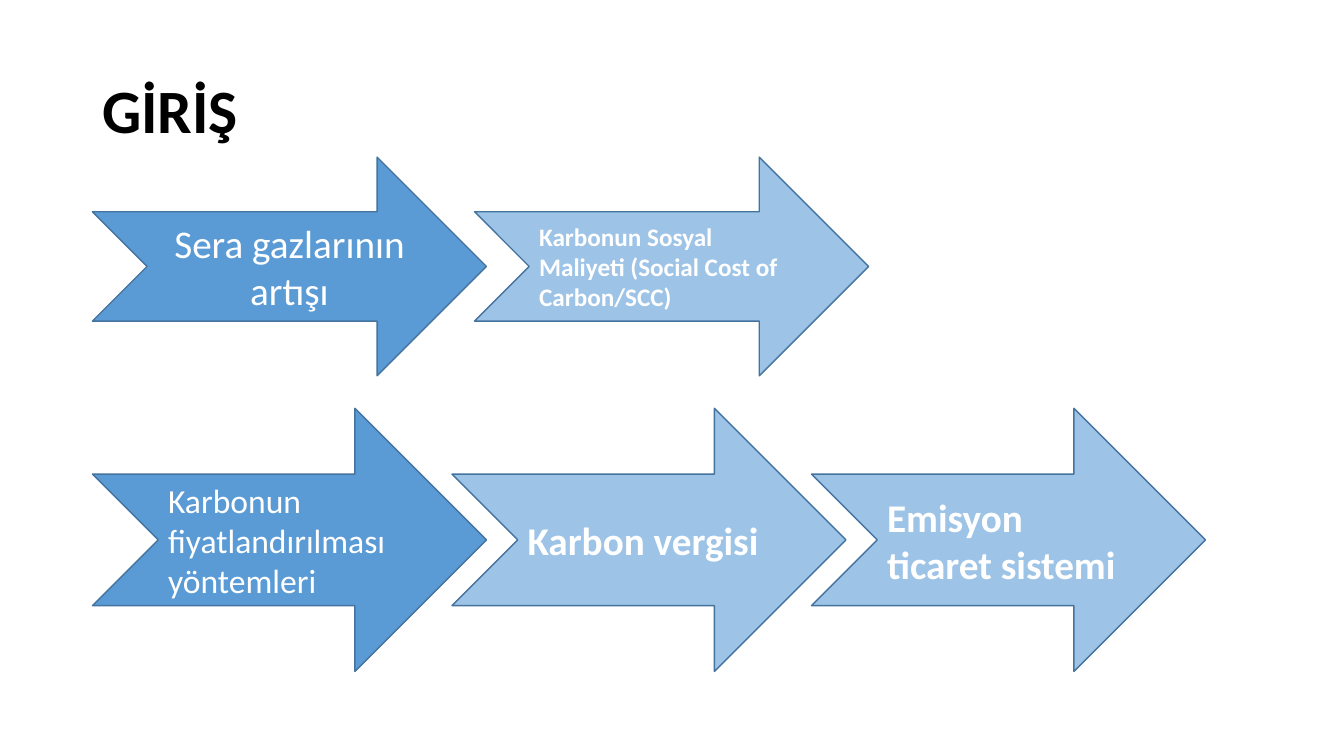
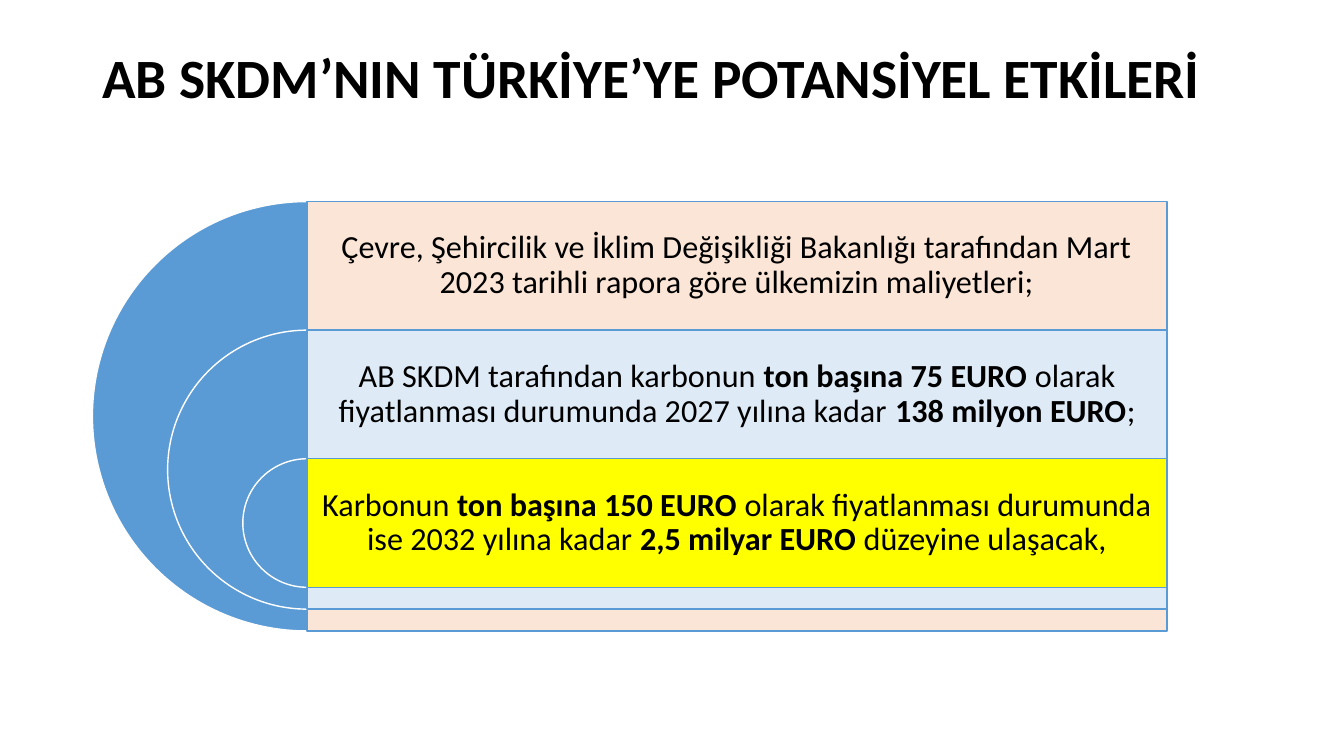
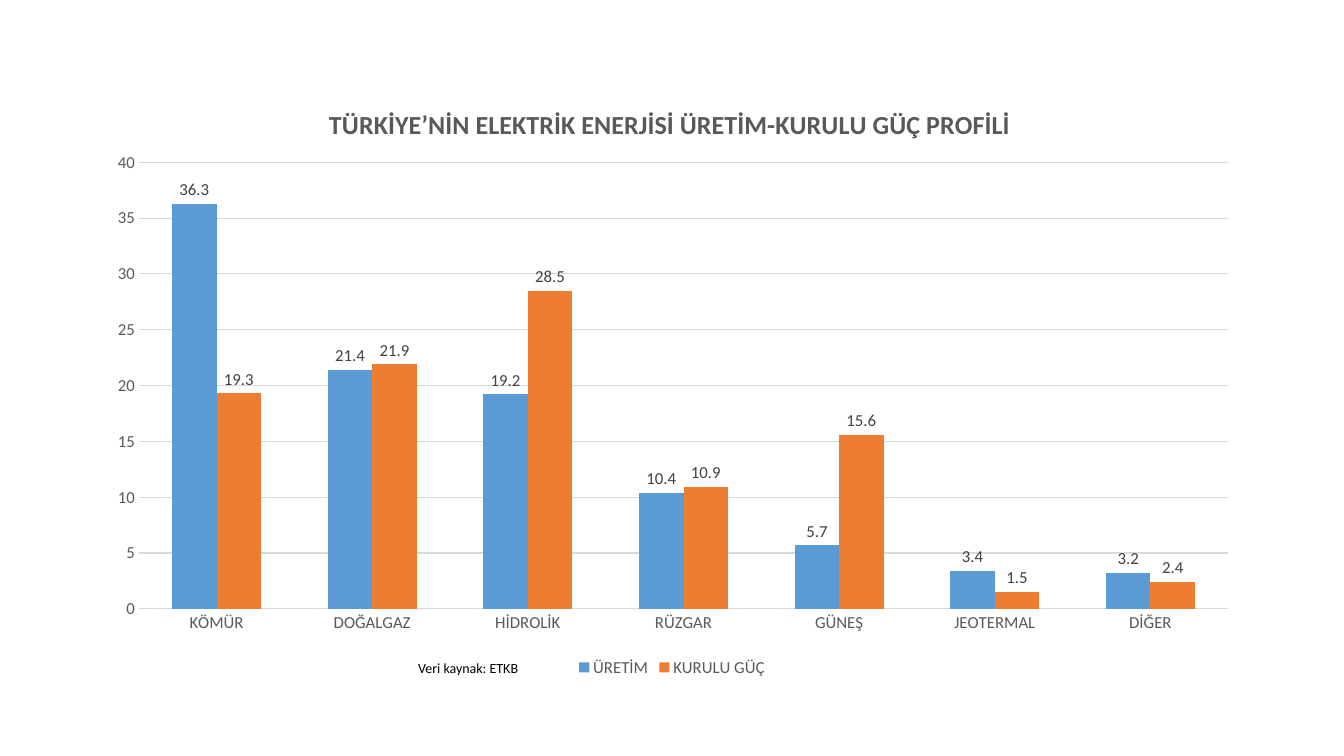
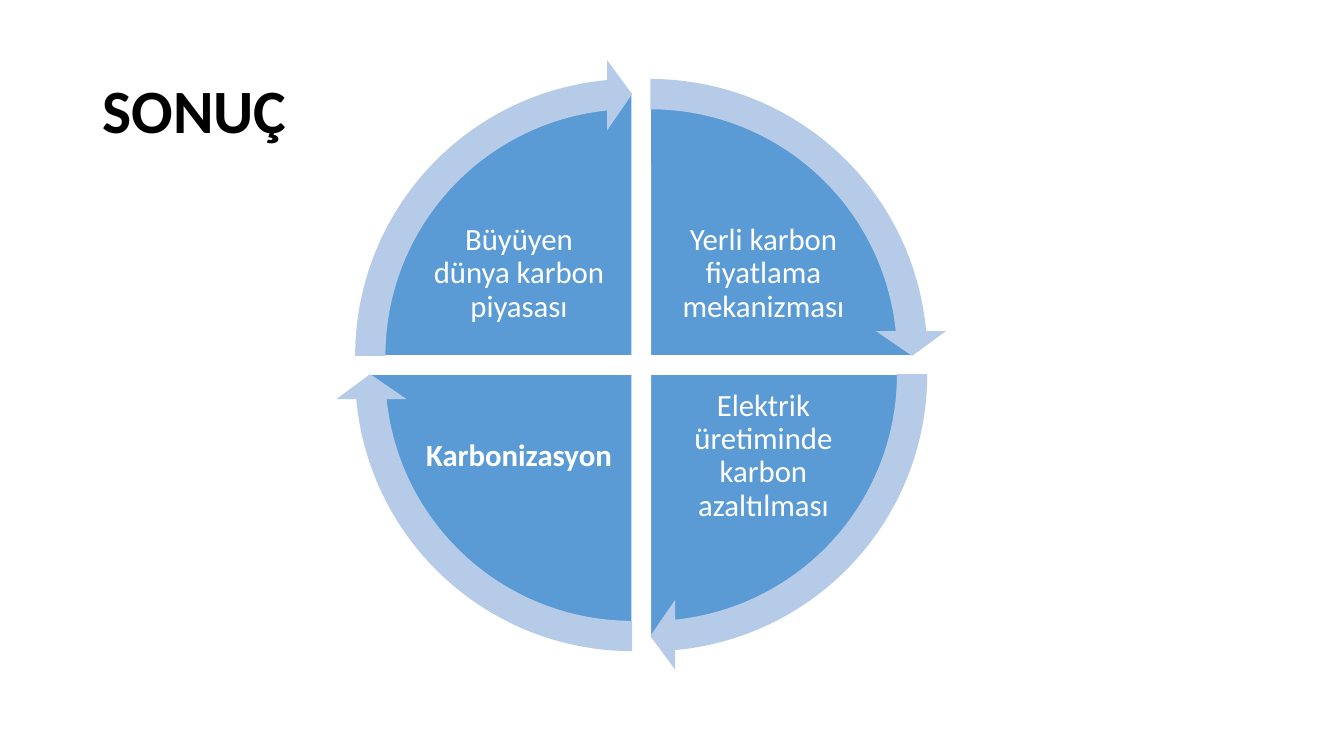
from lxml.etree import Element, SubElement
from pptx import Presentation
from pptx.chart.data import CategoryChartData
from pptx.dml.color import RGBColor
from pptx.enum.chart import XL_CHART_TYPE as Chart, XL_LABEL_POSITION as LabelPlace
from pptx.enum.chart import XL_LEGEND_POSITION as LegendPlace, XL_TICK_MARK as Tick
from pptx.enum.shapes import MSO_SHAPE as Shape
from pptx.enum.text import MSO_ANCHOR as Anchor, PP_ALIGN as Align
from pptx.oxml.ns import qn
from pptx.util import Cm, Pt

COLOURS = {
    "blue": "5B9BD5", "sky": "9DC3E6", "pale": "DEEBF7", "ring": "B5CBE7",
    "edge": "43739E", "orange": "ED7D31", "peach": "FBE5D6", "yellow": "FFFF00",
    "white": "FFFFFF", "black": "000000", "grey": "595959", "dark": "404040",
    "grid": "D9D9D9",
}
FONT = "Calibri"
LEFT = 2.33
INSETS = (0.25, 0.13)
# Angles are stored in 60000ths of a degree, adjustments in 100000ths
QUARTER = 54


# Shared formatting
def colour(name):
    return RGBColor.from_string(COLOURS[name])


def apply(target, values):
    for name, value in values.items():
        setattr(target, name, value)


def set_font(font, size, ink, bold=False):
    apply(font, {"name": FONT, "size": Pt(size), "bold": bold})
    font.color.rgb = colour(ink)


def write(shape, spans, size, ink="black", align=Align.LEFT, spacing=1.0,
          insets=INSETS, anchor=Anchor.MIDDLE):
    """Write one paragraph of (text, bold) spans."""
    frame = shape.text_frame
    side, end = map(Cm, insets)
    apply(frame, {"word_wrap": True, "vertical_anchor": anchor,
                  "margin_left": side, "margin_right": side,
                  "margin_top": end, "margin_bottom": end})
    para = frame.paragraphs[0]
    apply(para, {"alignment": align, "line_spacing": spacing})
    for text, bold in spans:
        span = para.add_run()
        span.text = text
        set_font(span.font, size, ink, bold)


# Kinds of element
def add_text(page, place, spans, size, **style):
    box = page.shapes.add_textbox(*map(Cm, place))
    write(box, spans, size, **style)


def add_title(page, text, size=44, height=3.68):
    add_text(page, (LEFT, 1.01, 29.21, height), [(text, True)], size, spacing=0.9)


def add_figure(page, kind, place, fill, line=None, adjustments=()):
    shape = page.shapes.add_shape(kind, *map(Cm, place))
    shape.shadow.inherit = False
    shape.fill.solid()
    shape.fill.fore_color.rgb = colour(fill)
    if line:
        shape.line.color.rgb = colour(line)
        shape.line.width = Pt(1)
    else:
        shape.line.fill.background()
    for index, value in enumerate(adjustments):
        shape.adjustments[index] = value
    return shape


def add_arrow_row(page, top, height, step, items):
    for index, (text, size, bold, align) in enumerate(items):
        arrow = add_figure(page, Shape.NOTCHED_RIGHT_ARROW,
                           (LEFT + index * step, top, 9.93, height),
                           "sky" if index else "blue", "edge")
        write(arrow, [(text, bold)], size, "white", align)


def set_layout(parent, index, **values):
    """Place a chart part by fractions of the chart's size."""
    for old in parent.findall(qn("c:layout")):
        parent.remove(old)
    layout = Element(qn("c:layout"))
    parent.insert(index, layout)
    manual = SubElement(layout, qn("c:manualLayout"))
    if "w" in values:
        SubElement(manual, qn("c:layoutTarget")).set("val", "inner")
    for name in ("xMode", "yMode"):
        SubElement(manual, qn("c:" + name)).set("val", "edge")
    for name, value in values.items():
        SubElement(manual, qn("c:" + name)).set("val", str(value))


# Slides
def build_intro(page):
    add_title(page, "GİRİŞ")
    add_arrow_row(page, 3.96, 5.51, 9.63, [
        ("Sera gazlarının artışı", 28, False, Align.CENTER),
        ("Karbonun Sosyal Maliyeti (Social Cost of Carbon/SCC)", 18, True, Align.LEFT),
    ])
    add_arrow_row(page, 10.29, 6.63, 9.06, [
        ("Karbonun fiyatlandırılması yöntemleri", 24, False, Align.LEFT),
        ("Karbon vergisi", 28, True, Align.LEFT),
        ("Emisyon ticaret sistemi", 28, True, Align.LEFT),
    ])


def build_effects(page):
    add_title(page, "AB SKDM’NIN TÜRKİYE’YE POTANSİYEL ETKİLERİ", 39.6, 2.05)
    centre, band, width = 7.74, 3.24, 21.67
    levels = [
        ("peach", [("Çevre, Şehircilik ve İklim Değişikliği Bakanlığı tarafından Mart 2023 "
                    "tarihli rapora göre ülkemizin maliyetleri;", False)]),
        ("pale", [("AB SKDM tarafından karbonun ", False), ("ton başına 75 EURO ", True),
                  ("olarak fiyatlanması durumunda 2027 yılına kadar ", False),
                  ("138 milyon EURO", True), (";", False)]),
        ("yellow", [("Karbonun ", False), ("ton başına 150 EURO ", True),
                    ("olarak fiyatlanması durumunda ise 2032 yılına kadar ", False),
                    ("2,5 milyar EURO ", True), ("düzeyine ulaşacak,", False)]),
    ]
    for index, (fill, spans) in enumerate(levels):
        top = 5.08 + index * band
        size = 10.82 - index * 3.79
        add_figure(page, Shape.PIE, (centre - size / 2, top, size, size),
                   "blue", "white", (QUARTER, 3 * QUARTER))
        add_figure(page, Shape.RECTANGLE, (centre, top, width, size), fill, "blue")
        add_text(page, (centre, top, width, band), spans, 23,
                 align=Align.CENTER, spacing=0.9, insets=(0.25, 0.25))


def build_profile(page):
    data = CategoryChartData()
    data.categories = ["KÖMÜR", "DOĞALGAZ", "HİDROLİK", "RÜZGAR", "GÜNEŞ",
                       "JEOTERMAL", "DİĞER"]
    data.add_series("ÜRETİM", (36.3, 21.4, 19.2, 10.4, 5.7, 3.4, 3.2))
    data.add_series("KURULU GÜÇ", (19.3, 21.9, 28.5, 10.9, 15.6, 1.5, 2.4))
    place = map(Cm, (LEFT, 1.96, 29.21, 15.21))
    chart = page.shapes.add_chart(Chart.COLUMN_CLUSTERED, *place, data).chart
    set_font(chart.font, 10, "black")

    # Title and plot area
    chart.has_title = True
    para = chart.chart_title.text_frame.paragraphs[0]
    span = para.add_run()
    span.text = "TÜRKİYE’NİN ELEKTRİK ENERJİSİ ÜRETİM-KURULU GÜÇ PROFİLİ"
    set_font(span.font, 18.6, "grey", True)
    set_layout(chart.element.find(".//" + qn("c:title")), 1, x=0.2, y=0.04)
    set_layout(chart.element.find(".//" + qn("c:plotArea")), 0,
               x=0.04, y=0.14, w=0.94, h=0.74)

    # Axes and legend
    for axis in (chart.category_axis, chart.value_axis):
        apply(axis, {"major_tick_mark": Tick.NONE, "minor_tick_mark": Tick.NONE})
        axis.format.line.fill.background()
        set_font(axis.tick_labels.font, 12, "grey")
    apply(chart.value_axis, {"minimum_scale": 0, "maximum_scale": 40, "major_unit": 5})
    grid = chart.value_axis.major_gridlines.format.line
    grid.color.rgb = colour("grid")
    grid.width = Pt(0.75)
    chart.has_legend = True
    apply(chart.legend, {"position": LegendPlace.BOTTOM, "include_in_layout": False})
    set_font(chart.legend.font, 12, "grey")

    # Columns
    plot = chart.plots[0]
    apply(plot, {"gap_width": 150, "overlap": 0, "vary_by_categories": False})
    for series, fill in zip(plot.series, ("blue", "orange")):
        series.format.fill.solid()
        series.format.fill.fore_color.rgb = colour(fill)
        labels = series.data_labels
        apply(labels, {"show_value": True, "position": LabelPlace.OUTSIDE_END})
        set_font(labels.font, 12, "dark")

    add_text(page, (10.29, 16.48, 10.08, 0.69), [("Veri kaynak: ETKB", False)], 10,
             anchor=Anchor.TOP)


def build_conclusion(page):
    add_title(page, "SONUÇ")
    centre_x, centre_y, gap = 16.16, 9.2, 0.23
    # Horizontal side, vertical side, start angle, text, bold
    quarters = [
        (1, -1, 3 * QUARTER, "Yerli karbon fiyatlama mekanizması", False),
        (1, 1, 0, "Elektrik üretiminde karbon azaltılması", False),
        (-1, 1, QUARTER, "Karbonizasyon", True),
        (-1, -1, 2 * QUARTER, "Büyüyen dünya karbon piyasası", False),
    ]

    def around(side_x, side_y, width, height, away_x=gap, away_y=gap):
        return (centre_x + side_x * away_x - width / 2,
                centre_y + side_y * away_y - height / 2, width, height)

    for side_x, side_y, start, text, bold in quarters:
        add_figure(page, Shape.PIE, around(side_x, side_y, 13.31, 13.31),
                   "blue", "white", (start, (start + QUARTER) % (4 * QUARTER)))
        add_text(page, around(side_x, side_y, 4.9, 3.63, 3.08, 2.3), [(text, bold)], 22,
                 ink="white", align=Align.CENTER, spacing=0.9, insets=(0.08, 0.08))
    head = 3.275
    for side_x, side_y, start, *_ in quarters:
        add_figure(page, Shape.CIRCULAR_ARROW, around(side_x, side_y, 14.96, 14.96), "ring",
                   adjustments=(0.051, head, start + QUARTER - head, start, 0.059))


def main():
    deck = Presentation()
    apply(deck, {"slide_width": Cm(33.87), "slide_height": Cm(19.05)})
    for build in (build_intro, build_effects, build_profile, build_conclusion):
        build(deck.slides.add_slide(deck.slide_layouts[6]))
    deck.save("out.pptx")


if __name__ == "__main__":
    main()
